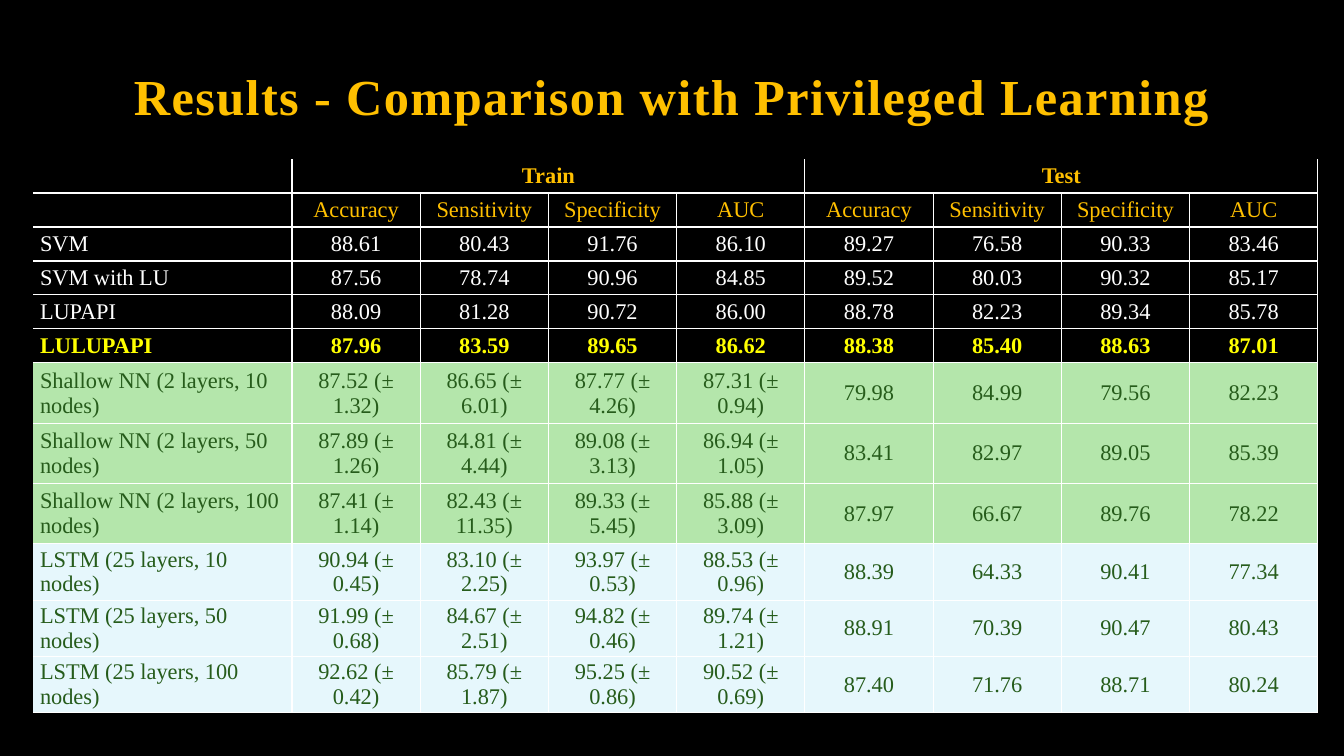
from dataclasses import dataclass

import pptx
import pptx.dml.color
import pptx.enum.text
import pptx.oxml.ns
import pptx.presentation
import pptx.slide
import pptx.table
import pptx.text.text
import pptx.util
from lxml import etree

FONT = "Times New Roman"
SCALE = 914400 / 100.8
COLORS = {
    "black": "000000",
    "white": "FFFFFF",
    "gold": "FFC000",
    "yellow": "FFFF00",
    "green": "265C1B",
    "mint": "B4E6AB",
    "ice": "E6F7FC",
}
ALIGN = pptx.enum.text.PP_ALIGN
ANCHOR = pptx.enum.text.MSO_ANCHOR
METRICS = ("Accuracy", "Sensitivity", "Specificity", "AUC")
GROUPS = ("Train", "Test")
SPAN = len(METRICS)
COUNT = SPAN * len(GROUPS)


@dataclass(frozen=True)
class Band:
    """Neighbouring rows that share one look and a total height in px."""
    height: int
    ink: str
    rows: tuple[tuple[str, ...], ...]
    fill: str | None = None
    bold: bool = False


BANDS = (
    Band(34, "gold", (("", "Train", "", "", "", "Test", "", "", ""),), bold=True),
    Band(34, "gold", (("", *METRICS, *METRICS),)),
    Band(102, "white", (
        ("SVM", "88.61", "80.43", "91.76", "86.10",
         "89.27", "76.58", "90.33", "83.46"),
        ("SVM with LU", "87.56", "78.74", "90.96", "84.85",
         "89.52", "80.03", "90.32", "85.17"),
        ("LUPAPI", "88.09", "81.28", "90.72", "86.00",
         "88.78", "82.23", "89.34", "85.78"),
    )),
    Band(34, "yellow", (
        ("LULUPAPI", "87.96", "83.59", "89.65", "86.62",
         "88.38", "85.40", "88.63", "87.01"),
    ), bold=True),
    Band(181, "green", (
        ("Shallow NN (2 layers, 10 nodes)",
         "87.52 (± 1.32)", "86.65 (± 6.01)", "87.77 (± 4.26)", "87.31 (± 0.94)",
         "79.98", "84.99", "79.56", "82.23"),
        ("Shallow NN (2 layers, 50 nodes)",
         "87.89 (± 1.26)", "84.81 (± 4.44)", "89.08 (± 3.13)", "86.94 (± 1.05)",
         "83.41", "82.97", "89.05", "85.39"),
        ("Shallow NN (2 layers, 100 nodes)",
         "87.41 (± 1.14)", "82.43 (± 11.35)", "89.33 (± 5.45)", "85.88 (± 3.09)",
         "87.97", "66.67", "89.76", "78.22"),
    ), fill="mint"),
    Band(169, "green", (
        ("LSTM (25 layers, 10 nodes)",
         "90.94 (± 0.45)", "83.10 (± 2.25)", "93.97 (± 0.53)", "88.53 (± 0.96)",
         "88.39", "64.33", "90.41", "77.34"),
        ("LSTM (25 layers, 50 nodes)",
         "91.99 (± 0.68)", "84.67 (± 2.51)", "94.82 (± 0.46)", "89.74 (± 1.21)",
         "88.91", "70.39", "90.47", "80.43"),
        ("LSTM (25 layers, 100 nodes)",
         "92.62 (± 0.42)", "85.79 (± 1.87)", "95.25 (± 0.86)", "90.52 (± 0.69)",
         "87.40", "71.76", "88.71", "80.24"),
    ), fill="ice"),
)


def px(size: int) -> pptx.util.Emu:
    return pptx.util.Emu(round(size * SCALE))


def color(name: str) -> pptx.dml.color.RGBColor:
    return pptx.dml.color.RGBColor.from_string(COLORS[name])


def write(frame: pptx.text.text.TextFrame, text: str, *, size: int, ink: str,
          bold: bool = False, align: ALIGN = ALIGN.CENTER,
          lines: float | None = None, track: int = 0) -> None:
    """Fill a frame with one formatted paragraph; track is in points."""
    para = frame.paragraphs[0]
    para.alignment = align
    para.line_spacing = lines
    if not text:
        etree.SubElement(para._p, pptx.oxml.ns.qn("a:endParaRPr"), sz=str(size * 100))
        return
    run = para.add_run()
    run.text = text
    run.font.name = FONT
    run.font.size = pptx.util.Pt(size)
    run.font.bold = bold
    run.font.color.rgb = color(ink)
    if track:
        run._r.get_or_add_rPr().set("spc", str(track * 100))


def edge(cell: pptx.table._Cell, side: str, shown: bool) -> None:
    """Set the border on side L, R, T or B."""
    qn = pptx.oxml.ns.qn
    line = etree.SubElement(cell._tc.get_or_add_tcPr(), qn(f"a:ln{side}"),
                            w=str(pptx.util.Pt(1)))
    if shown:
        fill = etree.SubElement(line, qn("a:solidFill"))
        etree.SubElement(fill, qn("a:srgbClr"), val=COLORS["white"])
    else:
        etree.SubElement(line, qn("a:noFill"))


def style(cell: pptx.table._Cell, band: Band, row: int, col: int) -> None:
    cell.margin_left = cell.margin_right = px(7)
    cell.margin_top = cell.margin_bottom = px(3)
    cell.vertical_anchor = ANCHOR.MIDDLE
    for side, shown in (("L", col > 0), ("R", True), ("T", row > 0), ("B", True)):
        edge(cell, side, shown)
    if band.fill:
        cell.fill.solid()
        cell.fill.fore_color.rgb = color(band.fill)
    else:
        cell.fill.background()


def add_title(slide: pptx.slide.Slide) -> None:
    title = slide.shapes.title
    title.left, title.top = px(0), px(27)
    title.width, title.height = px(1344), px(104)
    frame = title.text_frame
    frame.word_wrap = True
    frame.auto_size = pptx.enum.text.MSO_AUTO_SIZE.NONE
    frame.vertical_anchor = ANCHOR.BOTTOM
    write(frame, "Results - Comparison with Privileged Learning",
          size=36, ink="gold", bold=True, lines=0.9, track=1)


def add_scores(slide: pptx.slide.Slide) -> None:
    rows = [(band, row) for band in BANDS for row in band.rows]
    names, scores = 259, 1026
    height = sum(band.height for band in BANDS)
    table = slide.shapes.add_table(len(rows), COUNT + 1, px(33), px(159),
                                   px(names + scores), px(height)).table
    table.first_row = table.horz_banding = False
    table.columns[0].width = px(names)
    for col in range(1, COUNT + 1):
        table.columns[col].width = px(scores) // COUNT
    for first in range(1, COUNT + 1, SPAN):
        table.cell(0, first).merge(table.cell(0, first + SPAN - 1))
    for i, (band, texts) in enumerate(rows):
        table.rows[i].height = px(band.height) // len(band.rows)
        for col, text in enumerate(texts):
            cell = table.cell(i, col)
            style(cell, band, i, col)
            write(cell.text_frame, text, size=16, ink=band.ink, bold=band.bold,
                  align=ALIGN.CENTER if col else ALIGN.LEFT)


def main() -> None:
    deck = pptx.Presentation()
    deck.slide_width, deck.slide_height = px(1344), px(756)
    slide = deck.slides.add_slide(deck.slide_layouts.get_by_name("Title Only"))
    slide.background.fill.solid()
    slide.background.fill.fore_color.rgb = color("black")
    add_title(slide)
    add_scores(slide)
    deck.save("out.pptx")


if __name__ == "__main__":
    main()
